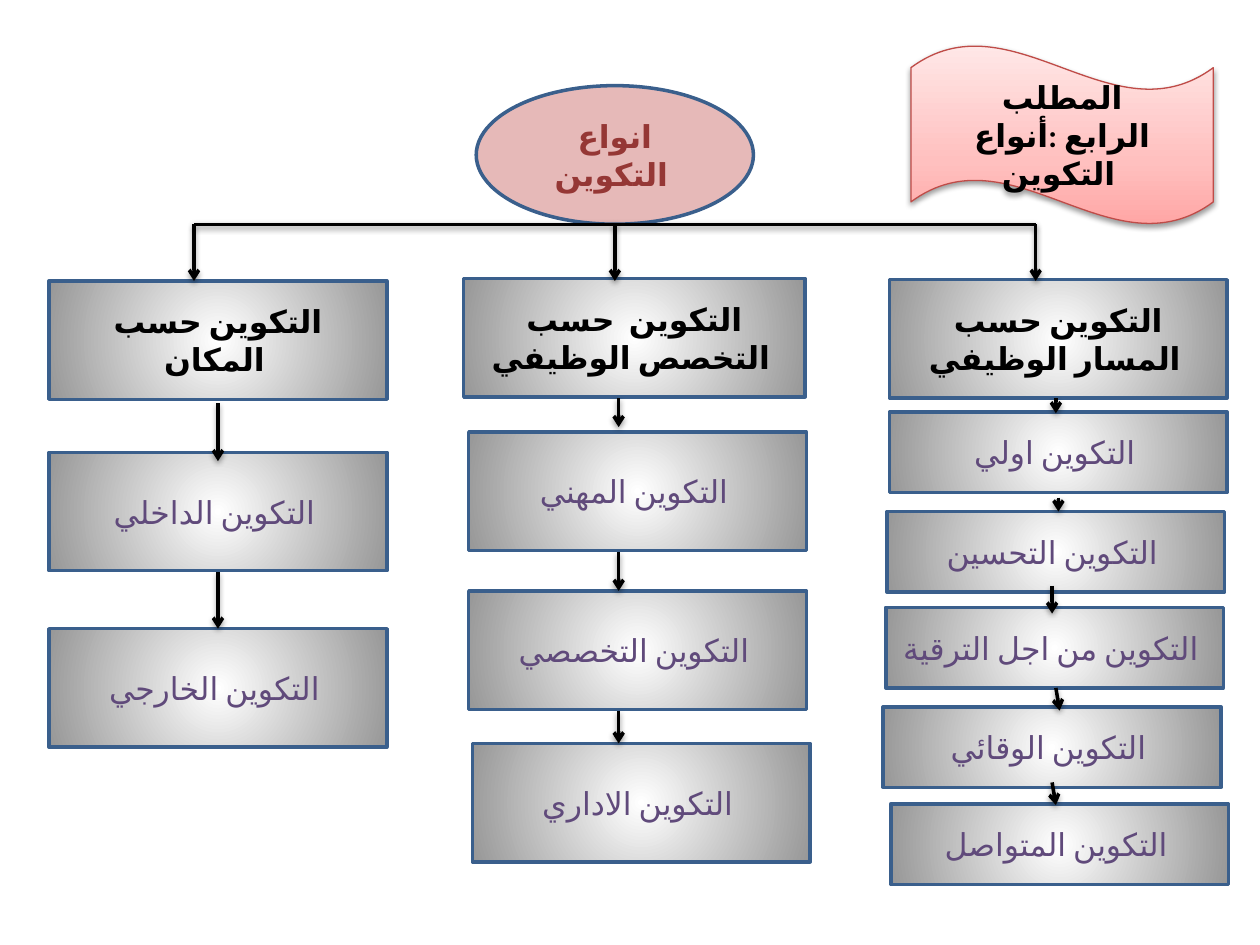
from lxml.etree import SubElement
from pptx import Presentation
from pptx.dml.color import RGBColor
from pptx.enum.lang import MSO_LANGUAGE_ID
from pptx.enum.shapes import MSO_CONNECTOR, MSO_SHAPE
from pptx.enum.text import MSO_ANCHOR, PP_ALIGN
from pptx.oxml.ns import qn
from pptx.util import Inches, Pt

COLORS = {
    "border": "3A5F8C", "root": "E6B9B8", "root_text": "953735",
    "item_text": "604A7B", "black": "000000", "banner_border": "BF4C48",
}
FONT = "Calibri"
BOX_GRADIENT = [(0, "FFFFFF"), (100, "979797")]
BANNER_GRADIENT = [(0, "FFA6A5"), (35, "FFC0BF"), (100, "FFE7E7")]

ROOT = ("انواع التكوين ", (3.78, 0.68, 2.2, 1.1))
BANNER = ("المطلب الرابع :أنواع التكوين ", (7.23, 0.36, 2.4, 1.42))
BRANCHES = [
    {
        "head": ("التكوين حسب المكان ", (0.39, 2.23, 2.68, 0.94)),
        "height": 0.94,
        "items": [
            ("التكوين الداخلي ", 0.39, 3.59),
            ("التكوين الخارجي ", 0.39, 4.99),
        ],
        "arrows": [(1.73, 3.2, 1.73, 3.66), (1.73, 4.54, 1.73, 4.99)],
        "drop": 1.54,
    },
    {
        "head": ("التكوين  حسب التخصص الوظيفي ", (3.68, 2.21, 2.71, 0.94)),
        "height": 0.94,
        "items": [
            ("التكوين المهني ", 3.72, 3.43),
            ("التكوين التخصصي ", 3.72, 4.69),
            ("التكوين الاداري ", 3.75, 5.9),
        ],
        "arrows": [(4.91, 3.16, 4.91, 3.39), (4.91, 4.38, 4.91, 4.69),
                   (4.91, 5.64, 4.91, 5.9)],
        "drop": 4.88,
    },
    {
        "head": ("التكوين حسب المسار الوظيفي ", (7.06, 2.22, 2.68, 0.94)),
        "height": 0.64,
        "items": [
            ("التكوين اولي ", 7.06, 3.27),
            ("التكوين التحسين ", 7.04, 4.06),
            ("التكوين من اجل الترقية ", 7.03, 4.82),
            ("التكوين الوقائي ", 7.01, 5.61),
            ("التكوين المتواصل ", 7.07, 6.38),
        ],
        "arrows": [(8.38, 3.16, 8.38, 3.28), (8.4, 3.95, 8.4, 4.06),
                   (8.35, 4.65, 8.35, 4.87), (8.38, 5.46, 8.41, 5.64),
                   (8.35, 6.21, 8.38, 6.39)],
        "drop": 8.22,
    },
]
ITEM_WIDTH = 2.68
BUS_TOP, DROP_END = 1.78, 2.23


def rgb(value):
    return RGBColor.from_string(value)


def add_node(slide, kind, text, place, border, text_color, bold=True, line_width=2):
    node = slide.shapes.add_shape(kind, *map(Inches, place))
    node.shadow.inherit = False
    node.line.color.rgb = rgb(border)
    node.line.width = Pt(line_width)
    frame = node.text_frame
    frame.word_wrap = True
    frame.vertical_anchor = MSO_ANCHOR.MIDDLE
    frame.text = text
    paragraph = frame.paragraphs[0]
    paragraph.alignment = PP_ALIGN.CENTER
    for run in paragraph.runs:
        run.font.name = FONT
        run.font.size = Pt(18)
        run.font.bold = bold
        run.font.color.rgb = rgb(text_color)
        run.font.language_id = MSO_LANGUAGE_ID.ARABIC_ALGERIA
        SubElement(run._r.get_or_add_rPr(), qn("a:cs"), typeface=FONT)
    return node


def fill_gradient(node, stops, angle=None):
    node.fill.gradient()
    gradient = node._element.spPr.find(qn("a:gradFill"))
    for child in list(gradient):
        gradient.remove(child)
    stop_list = SubElement(gradient, qn("a:gsLst"))
    for position, color in stops:
        stop = SubElement(stop_list, qn("a:gs"), pos=str(position * 1000))
        SubElement(stop, qn("a:srgbClr"), val=color)
    if angle is None:
        circle = SubElement(gradient, qn("a:path"), path="circle")
        SubElement(circle, qn("a:fillToRect"), l="50000", t="50000", r="50000", b="50000")
    else:
        SubElement(gradient, qn("a:lin"), ang=str(angle * 60000), scaled="0")


def add_shadow(properties):
    effects = properties.find(qn("a:effectLst"))
    if effects is None:
        effects = SubElement(properties, qn("a:effectLst"))
    shadow = SubElement(effects, qn("a:outerShdw"), blurRad="40000", dist="20000",
                        dir="5400000", rotWithShape="0")
    color = SubElement(shadow, qn("a:srgbClr"), val=COLORS["black"])
    SubElement(color, qn("a:alpha"), val="38000")


def add_line(slide, ends, arrow=True):
    link = slide.shapes.add_connector(MSO_CONNECTOR.STRAIGHT, *map(Inches, ends))
    link.line.color.rgb = rgb(COLORS["black"])
    link.line.width = Pt(2)
    if arrow:
        SubElement(link.line._get_or_add_ln(), qn("a:tailEnd"), type="arrow")
    add_shadow(link._element.spPr)


def add_box(slide, text, place, text_color, bold):
    box = add_node(slide, MSO_SHAPE.RECTANGLE, text, place, COLORS["border"], text_color, bold)
    fill_gradient(box, BOX_GRADIENT)


def main():
    deck = Presentation()
    deck.slide_width, deck.slide_height = Inches(10), Inches(7.5)
    slide = deck.slides.add_slide(deck.slide_layouts[6])

    root = add_node(slide, MSO_SHAPE.OVAL, *ROOT, COLORS["border"], COLORS["root_text"])
    root.fill.solid()
    root.fill.fore_color.rgb = rgb(COLORS["root"])

    for branch in BRANCHES:
        add_box(slide, *branch["head"], COLORS["black"], True)
        for text, left, top in branch["items"]:
            place = (left, top, ITEM_WIDTH, branch["height"])
            add_box(slide, text, place, COLORS["item_text"], False)

    for branch in BRANCHES:
        for ends in branch["arrows"]:
            add_line(slide, ends)

    banner = add_node(slide, MSO_SHAPE.WAVE, *BANNER, COLORS["banner_border"],
                      COLORS["black"], line_width=0.75)
    fill_gradient(banner, BANNER_GRADIENT, 270)
    add_shadow(banner._element.spPr)

    drops = [branch["drop"] for branch in BRANCHES]
    for start, end in zip(drops[1:], drops):
        add_line(slide, (start, BUS_TOP, end, BUS_TOP), arrow=False)
    for drop in drops:
        add_line(slide, (drop, BUS_TOP, drop, DROP_END))

    deck.save("out.pptx")


if __name__ == "__main__":
    main()
